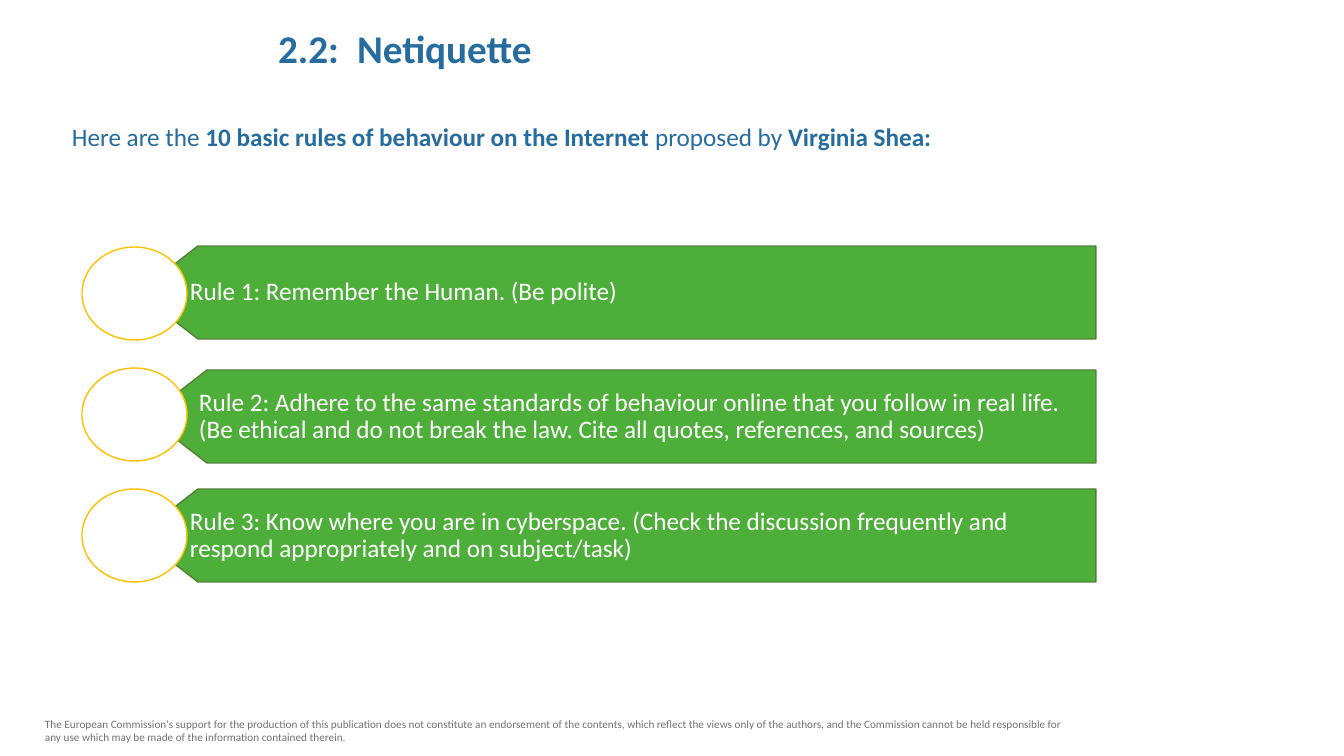
from lxml.etree import SubElement
from pptx import Presentation
from pptx.dml.color import RGBColor
from pptx.enum.shapes import MSO_SHAPE
from pptx.enum.text import MSO_ANCHOR, PP_ALIGN
from pptx.oxml.ns import qn
from pptx.util import Emu, Pt

BLUE = RGBColor(0x26, 0x6C, 0x9F)
GREEN = RGBColor(0x4E, 0xAE, 0x3A)
DARK_GREEN = RGBColor(0x53, 0x80, 0x35)
AMBER = RGBColor(0xFF, 0xC0, 0x00)
GREY = RGBColor(0x76, 0x71, 0x71)
WHITE = RGBColor(0xFF, 0xFF, 0xFF)

FONT = "Calibri"
RULE_STEP = 121
RULE_HEIGHT = 93
CIRCLE_WIDTH = 105
POINT_DEPTH = 60

# Text, then the shift of the bar's left and top edges
RULES = [
    ("Rule 1: Remember the Human. (Be polite)", 0, -1),
    ("Rule 2: Adhere to the same standards of behaviour online that you follow "
     "in real life. (Be ethical and do not break the law. Cite all quotes, "
     "references, and sources)", 9, 2),
    ("Rule 3: Know where you are in cyberspace. (Check the discussion frequently "
     "and respond appropriately and on subject/task)", 0, 0),
]
INTRODUCTION = [
    ("Here are the ", False),
    ("10 basic rules of behaviour on the Internet", True),
    (" proposed by ", False),
    ("Virginia Shea:", True),
]
DISCLAIMER = (
    "The European Commission's support for the production of this publication does "
    "not constitute an endorsement of the contents, which reflect the views only of "
    "the authors, and the Commission cannot be held responsible for any use which "
    "may be made of the information contained therein."
)


def px(length):
    """Turn pixels, 100.8 to the inch, into EMU."""
    return Emu(round(length * 914400 / 100.8))


def format_run(run, size, color, bold=False):
    run.font.name = FONT
    run.font.size = Pt(size)
    run.font.bold = bold
    run.font.color.rgb = color


def style_shape(shape, fill, line):
    shape.shadow.inherit = False
    shape.fill.solid()
    shape.fill.fore_color.rgb = fill
    shape.line.color.rgb = line
    shape.line.width = Pt(1)


def add_text_box(slide, left, top, width, height):
    box = slide.shapes.add_textbox(px(left), px(top), px(width), px(height))
    box.text_frame.word_wrap = True
    return box.text_frame


def place_title(slide, left, top, width, height):
    title = slide.shapes.title
    title.left, title.top = px(left), px(top)
    title.width, title.height = px(width), px(height)
    frame = title.text_frame
    frame.text = "2.2:\tNetiquette"
    frame.vertical_anchor = MSO_ANCHOR.MIDDLE
    paragraph = frame.paragraphs[0]
    paragraph.alignment = PP_ALIGN.LEFT
    paragraph.line_spacing = 1.15
    tabs = SubElement(paragraph._p.get_or_add_pPr(), qn("a:tabLst"))
    SubElement(tabs, qn("a:tab"), pos=str(px(79)), algn="l")
    for run in paragraph.runs:
        format_run(run, 28, BLUE, bold=True)


def add_introduction(slide, left, top, width, height):
    paragraph = add_text_box(slide, left, top, width, height).paragraphs[0]
    paragraph.alignment = PP_ALIGN.JUSTIFY
    paragraph.line_spacing = 1.15
    for text, bold in INTRODUCTION:
        run = paragraph.add_run()
        run.text = text
        format_run(run, 18, BLUE, bold)


def add_rule_bar(slide, text, left, top, right):
    """Draw a bar that points left and holds the text of one rule."""
    bottom, middle = top + RULE_HEIGHT, top + RULE_HEIGHT / 2
    shoulder = left + POINT_DEPTH
    outline = slide.shapes.build_freeform(px(right), px(bottom))
    corners = [(shoulder, bottom), (left, middle), (shoulder, top), (right, top)]
    outline.add_line_segments([(px(x), px(y)) for x, y in corners], close=True)
    bar = outline.convert_to_shape()
    style_shape(bar, GREEN, DARK_GREEN)
    frame = bar.text_frame
    frame.word_wrap = True
    frame.vertical_anchor = MSO_ANCHOR.MIDDLE
    frame.margin_left, frame.margin_right = px(52), px(11)
    frame.margin_top = frame.margin_bottom = px(6)
    frame.text = text
    paragraph = frame.paragraphs[0]
    paragraph.alignment = PP_ALIGN.LEFT
    paragraph.line_spacing = 0.9
    format_run(paragraph.runs[0], 18, WHITE)


def add_rules(slide, left, top, width):
    for index, (text, shift_x, shift_y) in enumerate(RULES):
        row_top = top + index * RULE_STEP
        add_rule_bar(slide, text, left + 56 + shift_x, row_top + shift_y, left + width)
        circle = slide.shapes.add_shape(
            MSO_SHAPE.OVAL, px(left), px(row_top), px(CIRCLE_WIDTH), px(RULE_HEIGHT))
        style_shape(circle, WHITE, AMBER)


def add_disclaimer(slide, left, top, width, height):
    frame = add_text_box(slide, left, top, width, height)
    frame.text = DISCLAIMER
    format_run(frame.paragraphs[0].runs[0], 8, GREY)


def main():
    presentation = Presentation()
    presentation.slide_width, presentation.slide_height = px(1344), px(756)
    title_only = presentation.slide_layouts[5]
    slide = presentation.slides.add_slide(title_only)
    add_disclaimer(slide, 35, 712, 1054, 37)
    place_title(slide, 268, 4, 404, 80)
    add_introduction(slide, 62, 112, 1093, 43)
    add_rules(slide, 82, 247, 1014)
    presentation.save("out.pptx")


if __name__ == "__main__":
    main()
